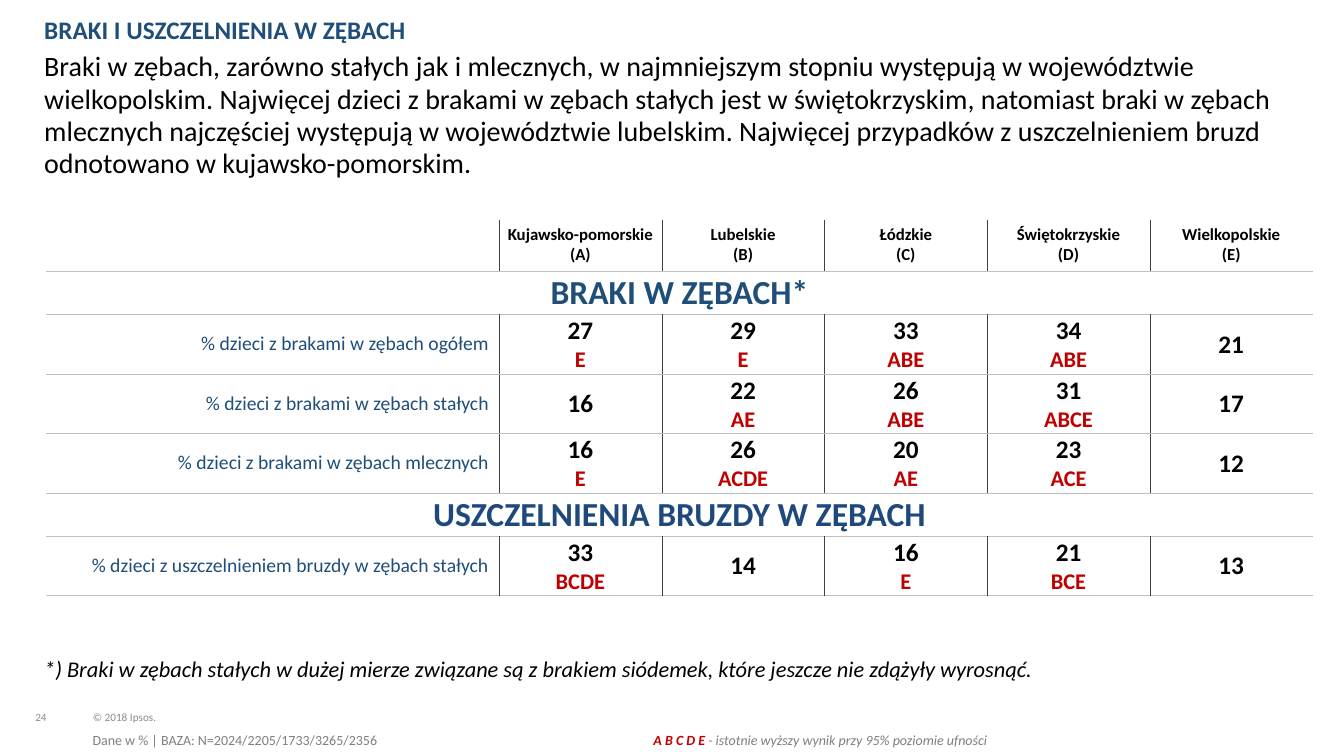
from dataclasses import dataclass
from typing import Any

from lxml.etree import SubElement
from pptx import Presentation
from pptx.dml.color import RGBColor
from pptx.enum.text import MSO_ANCHOR as Anchor, PP_ALIGN as Align
from pptx.oxml.ns import qn
from pptx.util import Inches, Pt

COLORS = {
    "white": "FFFFFF", "black": "000000", "navy": "1F4E79", "blue": "1F497D",
    "red": "C00000", "footer": "888B8D", "source": "7F7F7F", "dash": "808080",
    "vertical": "404040", "horizontal": "BFBFBF",
}
STYLES: dict[str, dict[str, Any]] = {
    "footer": {"size": Pt(8), "color": "footer"},
    "title": {"size": Pt(18), "color": "navy", "bold": True},
    "lead": {"size": Pt(20), "color": "black"},
    "note": {"size": Pt(16), "color": "black", "italic": True},
    "source": {"size": Pt(10), "color": "source"},
    "legend": {"size": Pt(10), "color": "source", "italic": True},
    "legend dash": {"size": Pt(10), "color": "dash", "italic": True},
    "legend letters": {"size": Pt(10), "color": "red", "italic": True, "bold": True},
    "region": {"size": Pt(12), "color": "black", "bold": True},
    "first section": {"size": Pt(24), "color": "navy", "bold": True},
    "second section": {"size": Pt(24), "color": "blue", "bold": True},
    "label": {"size": Pt(14), "color": "navy"},
    "value": {"size": Pt(18), "color": "black", "bold": True},
    "letters": {"size": Pt(16), "color": "red", "bold": True},
}


@dataclass
class TextRun:
    """A piece of text in a named style."""
    text: str
    style: str


@dataclass
class TextBox:
    """A one-paragraph text box, lengths in inches."""
    box: tuple[float, float, float, float]
    runs: list[TextRun]
    spacing: Any = 1.0
    margins: dict[str, float] | None = None
    anchor: Any = Anchor.TOP
    wrap: bool = True


@dataclass
class Section:
    """A heading that spans the whole table."""
    title: str
    style: str


@dataclass
class Measure:
    """A table row of results, each with its significance letters."""
    label: str
    results: list[str]


NO_MARGINS = {"left": 0, "top": 0, "right": 0, "bottom": 0}
TIGHT = {"left": 0.01, "top": 0.01, "right": 0.01, "bottom": 0}
TEXT_BOXES = [
    TextBox((0.35, 6.83, 0.45, 0.35), [TextRun("24", "footer")],
            0.85, NO_MARGINS, Anchor.BOTTOM, False),
    TextBox((0.92, 6.93, 1.01, 0.25), [TextRun("© 2018 Ipsos.", "footer")],
            0.85, NO_MARGINS, Anchor.BOTTOM, False),
    TextBox((0.34, 0.13, 9.78, 0.32), [TextRun("BRAKI I USZCZELNIENIA W ZĘBACH", "title")], 0.9),
    TextBox((0.82, 7.21, 6.86, 0.27),
            [TextRun("Dane w % | BAZA: N=2024/2205/1733/3265/2356", "source")]),
    TextBox((0.34, 0.45, 12.62, 1.33), [TextRun(
        "Braki w zębach, zarówno stałych jak i mlecznych, w najmniejszym stopniu występują "
        "w województwie wielkopolskim. Najwięcej dzieci z brakami w zębach stałych jest "
        "w świętokrzyskim, natomiast braki w zębach mlecznych najczęściej występują "
        "w województwie lubelskim. Najwięcej przypadków z uszczelnieniem bruzd odnotowano "
        "w kujawsko-pomorskim.", "lead")], Pt(23)),
    TextBox((6.45, 7.29, 4.33, 0.14), [
        TextRun(" A B C D E ", "legend letters"), TextRun("- ", "legend dash"),
        TextRun("istotnie wyższy wynik przy 95% poziomie ufności", "legend")], 0.8, NO_MARGINS),
    TextBox((0.34, 6.45, 10.73, 0.37), [TextRun(
        "*) Braki w zębach stałych w dużej mierze związane są z brakiem siódemek, "
        "które jeszcze nie zdążyły wyrosnąć.", "note")]),
]
REGIONS = ["Kujawsko-pomorskie", "Lubelskie", "Łódzkie", "Świętokrzyskie", "Wielkopolskie"]
ROWS = [
    Section("BRAKI W ZĘBACH*", "first section"),
    Measure("% dzieci z brakami w zębach ogółem", ["27 E", "29 E", "33 ABE", "34 ABE", "21"]),
    Measure("% dzieci z brakami w zębach stałych", ["16", "22 AE", "26 ABE", "31 ABCE", "17"]),
    Measure("% dzieci z brakami w zębach mlecznych", ["16 E", "26 ACDE", "20 AE", "23 ACE", "12"]),
    Section("USZCZELNIENIA BRUZDY W ZĘBACH", "second section"),
    Measure("% dzieci z uszczelnieniem bruzdy w zębach stałych",
            ["33 BCDE", "14", "16 E", "21 BCE", "13"]),
]
TABLE_WIDTH, LABEL_WIDTH = 12.56, 4.49
HEADER_HEIGHT, SECTION_HEIGHT, MEASURE_HEIGHT = 0.51, 0.43, 0.59


def rgb(name: str) -> RGBColor:
    """Return a named colour."""
    return RGBColor.from_string(COLORS[name])


def add_run(paragraph: Any, text_run: TextRun) -> None:
    """Append a styled run to a paragraph."""
    run = paragraph.add_run()
    run.text = text_run.text
    run.font.name = "Calibri"
    for name, value in ({"bold": False} | STYLES[text_run.style]).items():
        if name == "color":
            run.font.color.rgb = rgb(value)
        else:
            setattr(run.font, name, value)


def set_margins(target: Any, margins: dict[str, float] | None) -> None:
    """Set the inner margins of a cell or text frame."""
    for side, length in (margins or {}).items():
        setattr(target, f"margin_{side}", Inches(length))


def add_text_box(slide: Any, item: TextBox) -> None:
    """Draw one text box."""
    frame = slide.shapes.add_textbox(*map(Inches, item.box)).text_frame
    frame.word_wrap = item.wrap
    frame.vertical_anchor = item.anchor
    set_margins(frame, item.margins)
    paragraph = frame.paragraphs[0]
    paragraph.line_spacing = item.spacing
    for text_run in item.runs:
        add_run(paragraph, text_run)


def fill_cell(cell: Any, lines: list[TextRun], align: Any = Align.CENTER,
              margins: dict[str, float] | None = None, spacing: Any = None) -> None:
    """Write one paragraph per line into a cell."""
    cell.vertical_anchor = Anchor.MIDDLE
    set_margins(cell, margins)
    for index, line in enumerate(lines):
        frame = cell.text_frame
        paragraph = frame.add_paragraph() if index else frame.paragraphs[0]
        paragraph.alignment = align
        paragraph.line_spacing = spacing
        add_run(paragraph, line)


def style_cell(cell: Any, edges: dict[str, str | None]) -> None:
    """Draw the borders of a cell and fill it white."""
    properties = cell._tc.get_or_add_tcPr()
    for side, color in edges.items():
        line = SubElement(properties, qn(f"a:ln{side}"), w=str(Pt(0.25)))
        if color:
            fill = SubElement(line, qn("a:solidFill"))
            SubElement(fill, qn("a:srgbClr"), val=COLORS[color])
        else:
            SubElement(line, qn("a:noFill"))
    cell.fill.solid()
    cell.fill.fore_color.rgb = rgb("white")


def add_results_table(slide: Any) -> None:
    """Draw the table of results by region."""
    heights = [HEADER_HEIGHT] + [
        SECTION_HEIGHT if isinstance(row, Section) else MEASURE_HEIGHT for row in ROWS]
    last = len(REGIONS)
    table = slide.shapes.add_table(
        len(heights), last + 1, Inches(0.46), Inches(2.18),
        Inches(TABLE_WIDTH), Inches(sum(heights))).table
    table.first_row = table.horz_banding = False
    widths = [LABEL_WIDTH] + [(TABLE_WIDTH - LABEL_WIDTH) / last] * last
    for column, width in zip(table.columns, widths):
        column.width = Inches(width)
    for index, height in enumerate(heights):
        table.rows[index].height = Inches(height)
        spanning = index > 0 and isinstance(ROWS[index - 1], Section)
        for position in range(last + 1):
            style_cell(table.cell(index, position), {
                "L": "vertical" if position > 0 and not spanning else None,
                "R": "vertical" if position < last and not spanning else None,
                "T": "horizontal" if index else None,
                "B": "horizontal"})
    for position, region in enumerate(REGIONS, 1):
        lines = [TextRun(region, "region"), TextRun(f"({'ABCDE'[position - 1]})", "region")]
        fill_cell(table.cell(0, position), lines, margins=NO_MARGINS, spacing=Pt(14))
    for index, row in enumerate(ROWS, 1):
        first = table.cell(index, 0)
        if isinstance(row, Section):
            first.merge(table.cell(index, last))
            fill_cell(first, [TextRun(row.title, row.style)], margins=TIGHT)
            continue
        fill_cell(first, [TextRun(row.label, "label")], Align.RIGHT)
        for position, result in enumerate(row.results, 1):
            lines = [TextRun(*pair) for pair in zip(result.split(), ("value", "letters"))]
            fill_cell(table.cell(index, position), lines, margins=TIGHT)


def main() -> None:
    """Build and save the slide."""
    presentation = Presentation()
    presentation.slide_width, presentation.slide_height = Inches(13.33), Inches(7.5)
    slide = presentation.slides.add_slide(presentation.slide_layouts[6])
    add_results_table(slide)
    for item in TEXT_BOXES:
        add_text_box(slide, item)
    presentation.save("out.pptx")


if __name__ == "__main__":
    main()
